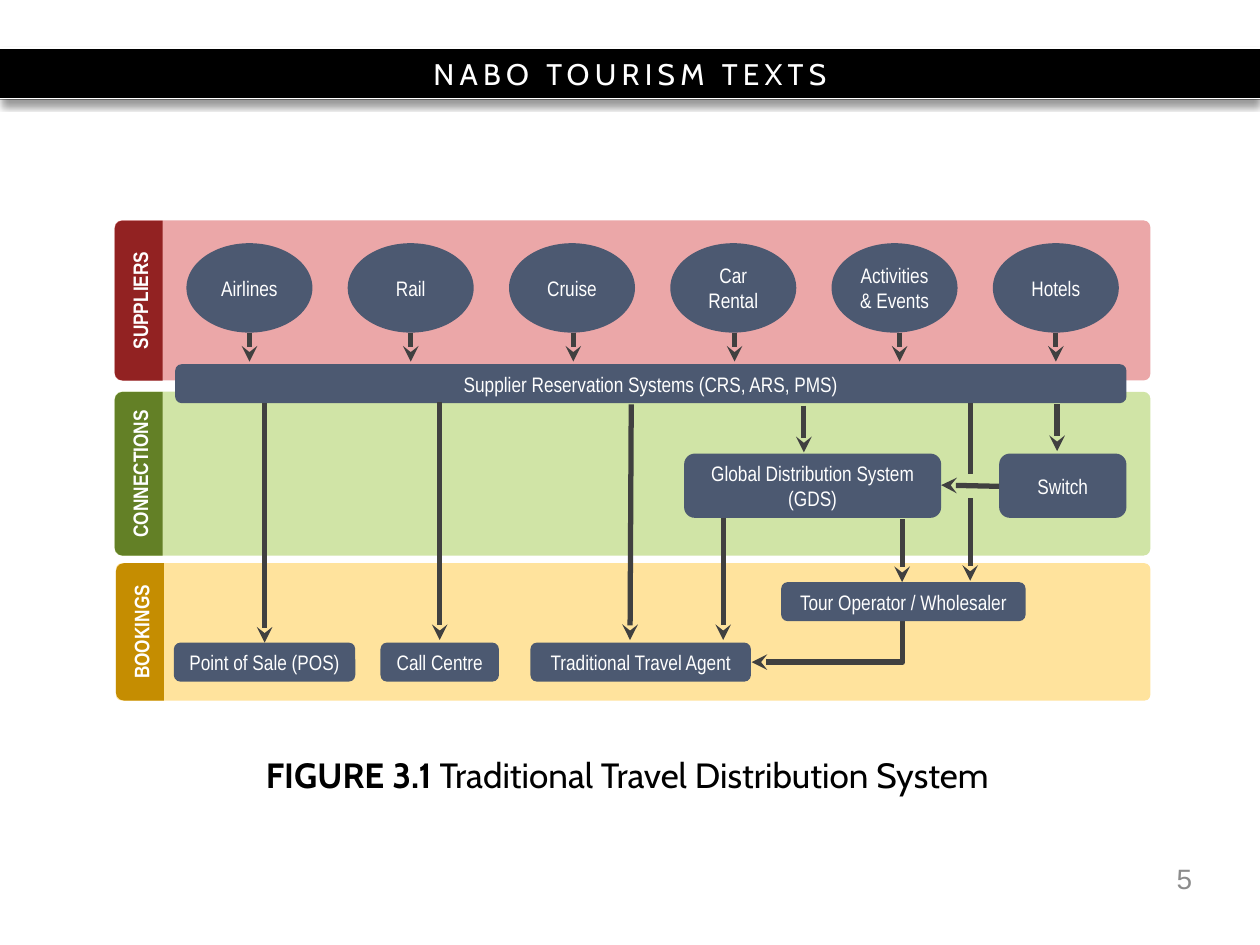
from copy import deepcopy
from lxml import etree
from pptx import Presentation
from pptx.dml.color import RGBColor
from pptx.enum import shapes, text as txt
from pptx.oxml import parse_xml
from pptx.oxml.ns import nsdecls, qn
from pptx.util import Inches, Pt

BLACK = RGBColor(0x00, 0x00, 0x00)
WHITE = RGBColor(0xFF, 0xFF, 0xFF)
GREY = RGBColor(0x8C, 0x8C, 0x8C)
DARK = RGBColor(0x40, 0x40, 0x40)
SLATE = RGBColor(0x4C, 0x59, 0x71)
ROSE = RGBColor(0xEB, 0xA7, 0xA8)
RED = RGBColor(0x92, 0x22, 0x22)
LIME = RGBColor(0xD0, 0xE4, 0xA6)
GREEN = RGBColor(0x63, 0x80, 0x26)
CREAM = RGBColor(0xFF, 0xE3, 0x9D)
GOLD = RGBColor(0xC5, 0x8D, 0x01)

FORM = shapes.MSO_SHAPE
LINK = shapes.MSO_CONNECTOR
ALIGN = txt.PP_ALIGN

deck = Presentation()
deck.slide_width, deck.slide_height = Inches(10), Inches(7.5)
slide = deck.slides.add_slide(deck.slide_layouts[6])


def put(words, at, form=None, fill=None, font="Arial Narrow", size=12, color=WHITE,
        bold=False, align=ALIGN.CENTER, pad=(0.1, 0.05), wrap=True, turn=0):
    box = [Inches(n) for n in at]
    if form is None:
        shape = slide.shapes.add_textbox(*box)
    else:
        shape = slide.shapes.add_shape(form, *box)
        shape.shadow.inherit = False
        shape.fill.solid()
        shape.fill.fore_color.rgb = fill
        shape.line.fill.background()
    shape.rotation = turn
    frame = shape.text_frame
    frame.word_wrap = wrap
    frame.vertical_anchor = txt.MSO_ANCHOR.MIDDLE
    frame.margin_left = frame.margin_right = Inches(pad[0])
    frame.margin_top = frame.margin_bottom = Inches(pad[1])
    para = frame.paragraphs[0]
    para.alignment = align
    para.text = words
    for run in para.runs:
        run.font.name = font
        run.font.size = Pt(size)
        run.font.bold = bold
        run.font.color.rgb = color
    for gap in para._p.findall(qn("a:br")):
        gap.append(deepcopy(para.runs[0]._r.rPr))
    return shape


def join(x1, y1, x2, y2, color=DARK, width=3, head=True, kind=LINK.STRAIGHT):
    line = slide.shapes.add_connector(kind, Inches(x1), Inches(y1), Inches(x2), Inches(y2))
    line.line.color.rgb = color
    line.line.width = Pt(width)
    if head:
        etree.SubElement(line.line._get_or_add_ln(), qn("a:tailEnd"), type="stealth")
    etree.SubElement(line._element.spPr, qn("a:effectLst"))
    return line


bar = put("NABO TOURISM TEXTS", (0, 0.38, 10, 0.41), FORM.RECTANGLE, BLACK, font="Cabin", size=17)
bar.text_frame.paragraphs[0].runs[0]._r.rPr.set("spc", "300")
shade = parse_xml(
    f'<a:outerShdw {nsdecls("a")} blurRad="50800" dist="38100" dir="5400000" rotWithShape="0">'
    '<a:srgbClr val="000000"><a:alpha val="40000"/></a:srgbClr></a:outerShdw>')
bar._element.spPr.find(qn("a:effectLst")).append(shade)
for y in (0.38, 0.78):
    join(0, y, 10, y, WHITE, 0.75, head=False)

for name, left, top, high, pale, deep in (
    ("SUPPLIERS", 0.91, 1.75, 1.27, ROSE, RED),
    ("CONNECTIONS", 0.91, 3.11, 1.3, LIME, GREEN),
    ("BOOKINGS", 0.92, 4.47, 1.09, CREAM, GOLD),
):
    band = put("", (left, top, 9.13 - left, high), FORM.ROUNDED_RECTANGLE, pale)
    band.adjustments[0] = 0.042
    put(name, (left + 0.19 - high / 2, top + high / 2 - 0.19, high, 0.38),
        FORM.ROUND_2_SAME_RECTANGLE, deep, bold=True, turn=270)

names = ("Airlines", "Rail", "Cruise", "Car\nRental", "Activities\n& Events", "Hotels")
for i, name in enumerate(names):
    put(name, (1.48 + 1.28 * i, 1.93, 1, 0.71), FORM.OVAL, SLATE, pad=(0, 0), wrap=False)

bend = join(6.4, 4.49, 6.73, 5.69, kind=LINK.ELBOW)
bend._element.spPr.xfrm.set("rot", "5400000")
bend._element.spPr.find(qn("a:prstGeom")).set("prst", "bentConnector2")

for name, *at in (
    ("Supplier Reservation Systems (CRS, ARS, PMS)", 1.39, 2.89, 7.55, 0.31),
    ("Global Distribution System (GDS)", 5.43, 3.6, 2.04, 0.51),
    ("Switch", 7.93, 3.6, 1.01, 0.51),
    ("Tour Operator / Wholesaler", 6.2, 4.62, 1.94, 0.31),
    ("Point of Sale (POS)", 1.38, 5.1, 1.44, 0.31),
    ("Call Centre", 3.02, 5.1, 0.94, 0.31),
    ("Traditional Travel Agent", 4.21, 5.1, 1.75, 0.31),
):
    put(name, at, FORM.ROUNDED_RECTANGLE, SLATE, pad=(0.1, 0.02))

for x in (1.98, 3.26, 4.55, 5.83, 7.14, 8.38):
    join(x, 2.64, x, 2.87)
for ends in (
    (2.1, 3.2, 2.1, 5.1),
    (3.49, 3.19, 3.49, 5.08),
    (5.01, 3.21, 5, 5.08),
    (6.38, 3.22, 6.38, 3.59),
    (8.39, 3.21, 8.39, 3.58),
    (5.74, 4.11, 5.74, 5.08),
    (7.16, 4.12, 7.16, 4.62),
    (7.7, 3.2, 7.7, 4.61),
):
    join(*ends)
join(7.7, 3.76, 7.7, 3.95, LIME, head=False)
join(7.93, 3.86, 7.47, 3.85)

title = put("FIGURE 3.1 ", (0.7, 5.85, 8.56, 0.48), font="Cabin", size=20, color=BLACK, bold=True)
para = title.text_frame.paragraphs[0]
para.line_spacing = Pt(32)
rest = para.add_run()
rest.text = "Traditional Travel Distribution System"
rest.font.name = "Cabin"
rest.font.size = Pt(20)
rest.font.bold = False
rest.font.color.rgb = BLACK

put("5", (7.23, 6.77, 2.33, 0.4), font="Arial", size=16, color=GREY, align=ALIGN.RIGHT)

deck.save("out.pptx")
